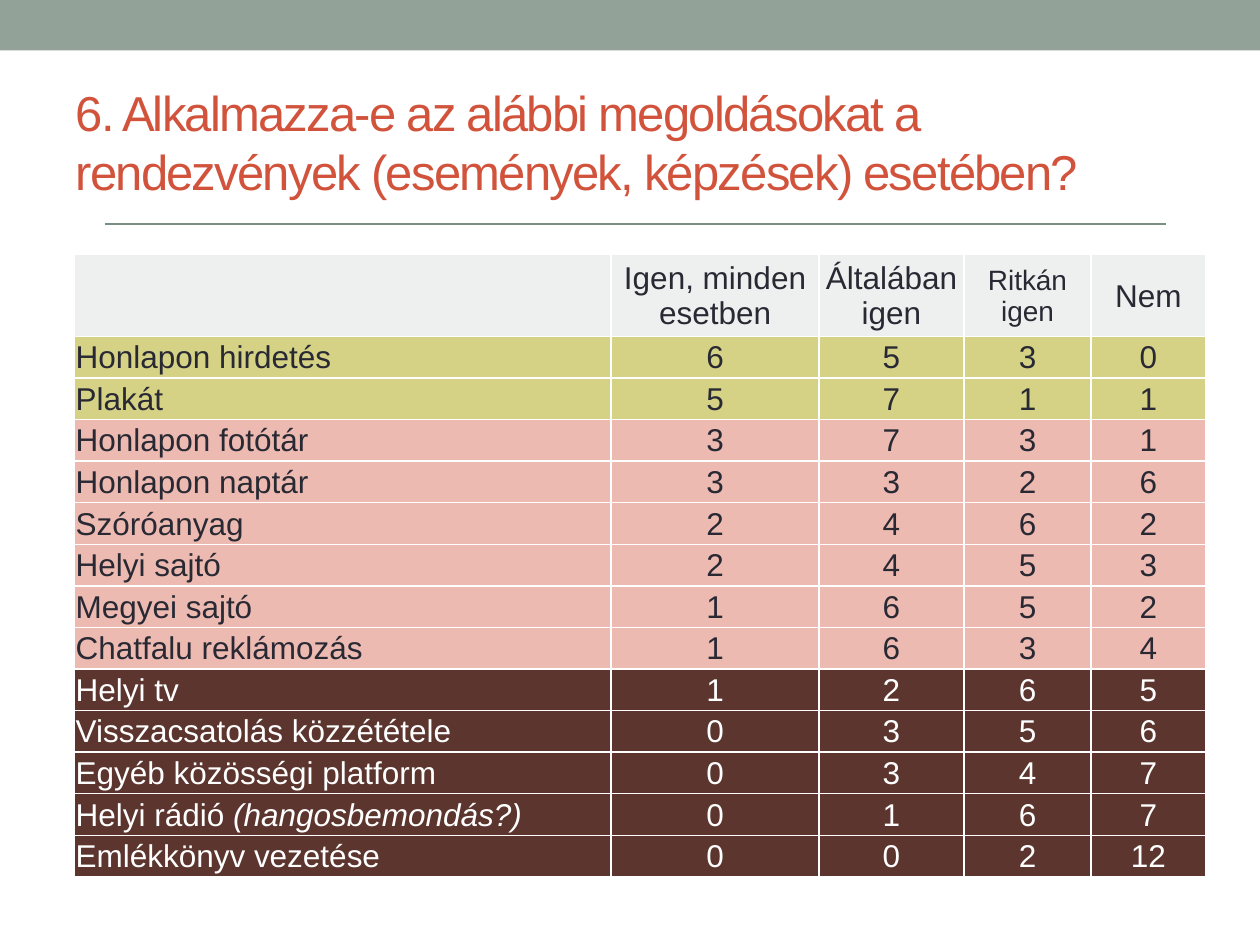
import pptx
import pptx.util
import pptx.dml.color
import pptx.enum.text
import pptx.enum.shapes
import pptx.oxml
import pptx.oxml.ns
import lxml.etree

Inches, Pt = pptx.util.Inches, pptx.util.Pt
RGB = pptx.dml.color.RGBColor
ALIGN = pptx.enum.text.PP_ALIGN
MIDDLE = pptx.enum.text.MSO_ANCHOR.MIDDLE

WHITE = RGB(0xFF, 0xFF, 0xFF)
INK = RGB(0x29, 0x29, 0x34)
RED = RGB(0xD2, 0x53, 0x3C)
SAGE = RGB(0x93, 0xA2, 0x99)
RULE = RGB(0x7B, 0x8E, 0x82)
PALE = RGB(0xEE, 0xF0, 0xEF)
LIME = RGB(0xD5, 0xD2, 0x86)
PINK = RGB(0xED, 0xBA, 0xB1)
BROWN = RGB(0x5B, 0x35, 0x2E)


def style(run, size, color):
    run.font.name = "Arial"
    run.font.size = Pt(size)
    run.font.color.rgb = color


def border(cell):
    props = cell._tc.get_or_add_tcPr()
    for spot, side in enumerate(("lnL", "lnR", "lnT", "lnB")):
        props.insert(spot, pptx.oxml.parse_xml(
            f'<a:{side} {pptx.oxml.ns.nsdecls("a")} w="12700"><a:solidFill>'
            f'<a:srgbClr val="{WHITE}"/></a:solidFill></a:{side}>'))


prs = pptx.Presentation()
prs.slide_width, prs.slide_height = Inches(10), Inches(7.5)
slide = prs.slides.add_slide(prs.slide_layouts[5])
shapes = slide.shapes

# Title
title = shapes.title
title.left, title.top = Inches(0.5), Inches(0.58)
title.width, title.height = Inches(9), Inches(1.08)
frame = title.text_frame
frame.text = "6. Alkalmazza-e az alábbi megoldásokat a rendezvények (események, képzések) esetében?"
frame.word_wrap = True
frame.auto_size = pptx.enum.text.MSO_AUTO_SIZE.NONE
frame.vertical_anchor = MIDDLE
head = frame.paragraphs[0]
head.alignment = ALIGN.LEFT
style(head.runs[0], 28, RED)
head.runs[0].font._element.set("spc", "-100")

# Top band
band = shapes.add_shape(pptx.enum.shapes.MSO_SHAPE.RECTANGLE, 0, 0, Inches(10), Inches(0.4))
band.shadow.inherit = False
band.fill.solid()
band.fill.fore_color.rgb = SAGE
band.line.fill.background()

# Answers, grouped by row colour
groups = [
    (PALE, INK, [("", "Igen, minden esetben", "Általában igen", "Ritkán igen", "Nem")]),
    (LIME, INK, [
        ("Honlapon hirdetés", 6, 5, 3, 0),
        ("Plakát", 5, 7, 1, 1),
    ]),
    (PINK, INK, [
        ("Honlapon fotótár", 3, 7, 3, 1),
        ("Honlapon naptár", 3, 3, 2, 6),
        ("Szóróanyag", 2, 4, 6, 2),
        ("Helyi sajtó", 2, 4, 5, 3),
        ("Megyei sajtó", 1, 6, 5, 2),
        ("Chatfalu reklámozás", 1, 6, 3, 4),
    ]),
    (BROWN, WHITE, [
        ("Helyi tv", 1, 2, 6, 5),
        ("Visszacsatolás közzététele", 0, 3, 5, 6),
        ("Egyéb közösségi platform", 0, 3, 4, 7),
        ("Helyi rádió (hangosbemondás?)", 0, 1, 6, 7),
        ("Emlékkönyv vezetése", 0, 0, 2, 12),
    ]),
]
rows = [(fill, ink, row) for fill, ink, part in groups for row in part]
widths = [4.26, 1.65, 1.15, 1.01, 0.91]

# Table
grid = shapes.add_table(len(rows), len(widths), Inches(0.59), Inches(2.02),
                        Inches(8.98), Inches(4.96)).table
for col, width in zip(grid.columns, widths):
    col.width = Inches(width)
for r, (fill, ink, row) in enumerate(rows):
    grid.rows[r].height = Inches(0.33 if r else 0.65)
    for c, value in enumerate(row):
        cell = grid.cell(r, c)
        cell.fill.solid()
        cell.fill.fore_color.rgb = fill
        border(cell)
        cell.vertical_anchor = MIDDLE
        cell.margin_left = cell.margin_right = cell.margin_top = Inches(0.01)
        cell.margin_bottom = 0
        para = cell.text_frame.paragraphs[0]
        para.alignment = ALIGN.CENTER if c else ALIGN.LEFT
        # A remark in brackets is set in italics
        main, mark, note = str(value).partition("(")
        para.text = main
        if note:
            para.add_run().text = mark + note
            para.runs[-1].font.italic = True
        for run in para.runs:
            style(run, 16 if value == "Ritkán igen" else 18, ink)
            if not r:
                run.font.bold = False

# Rule under the title
rule = shapes.add_connector(pptx.enum.shapes.MSO_CONNECTOR.STRAIGHT,
                            Inches(0.83), Inches(1.78), Inches(9.25), Inches(1.78))
rule.line.color.rgb = RULE
rule.line.width = Pt(1)
lxml.etree.SubElement(rule._element.spPr, pptx.oxml.ns.qn("a:effectLst"))

prs.save("out.pptx")
